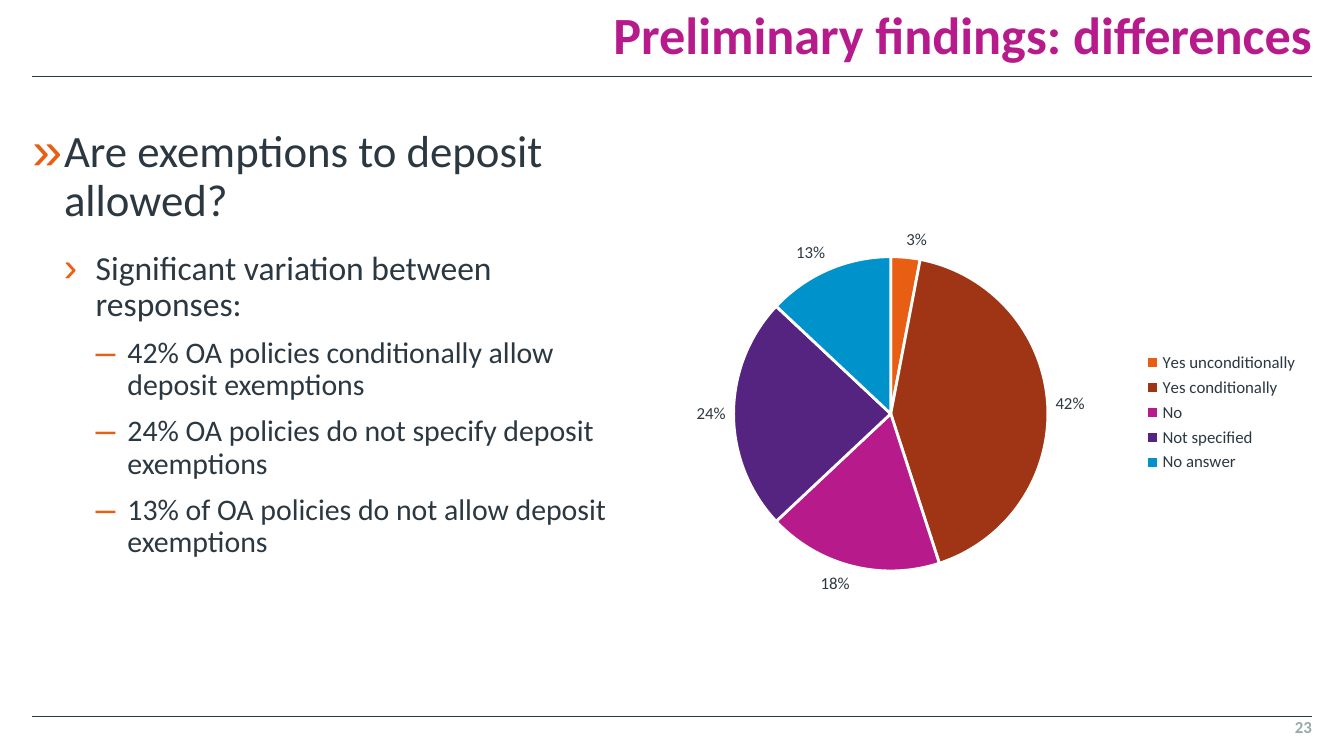
from dataclasses import dataclass

from lxml import etree
from pptx import Presentation
from pptx.chart.data import CategoryChartData
from pptx.dml.color import RGBColor
from pptx.enum.chart import XL_CHART_TYPE, XL_LABEL_POSITION, XL_LEGEND_POSITION
from pptx.enum.shapes import MSO_CONNECTOR
from pptx.enum.text import MSO_ANCHOR, PP_ALIGN
from pptx.oxml.ns import qn
from pptx.util import Inches, Pt

PIE = XL_CHART_TYPE.PIE
OUTER = XL_LABEL_POSITION.OUTSIDE_END
LEGEND = XL_LEGEND_POSITION.RIGHT
STRAIGHT = MSO_CONNECTOR.STRAIGHT
BOTTOM, TOP = MSO_ANCHOR.BOTTOM, MSO_ANCHOR.TOP
RIGHT, LEFT = PP_ALIGN.RIGHT, PP_ALIGN.LEFT

WIDE = 10
HIGH = WIDE * 9 / 16
EDGE = 0.24
FAR = WIDE - EDGE
STEP = Pt(17)  # indent of each bullet level
HEAD, FOOT = 0.57, 5.33
FACE, MARKS = "Calibri", "Arial"
INK, PINK, ORANGE, GREY, WHITE = "2C3841", "B71A8B", "E85E12", "9BA7A8", "FFFFFF"


@dataclass
class Point:
    text: str
    level: int


@dataclass
class Style:
    mark: str
    size: int
    before: float
    after: float


@dataclass
class Slice:
    name: str
    share: int
    color: str


STYLES = [Style("»", 24, 9, 6), Style("›", 18, 7.5, 0), Style("–", 16, 7.5, 0)]
POINTS = [
    Point("Are exemptions to deposit allowed?", 0),
    Point("Significant variation between responses:", 1),
    Point("42% OA policies conditionally allow deposit exemptions", 2),
    Point("24% OA policies do not specify deposit exemptions", 2),
    Point("13% of OA policies do not allow deposit exemptions", 2),
]
SLICES = [
    Slice("Yes unconditionally", 3, ORANGE),
    Slice("Yes conditionally", 42, "9F3515"),
    Slice("No", 18, PINK),
    Slice("Not specified", 24, "552481"),
    Slice("No answer", 13, "0092CB"),
]


def rgb(code: str) -> RGBColor:
    return RGBColor.from_string(code)


def set_font(font, size: float, color: str, bold: bool = False) -> None:
    font.name, font.size, font.bold = FACE, Pt(size), bold
    font.color.rgb = rgb(color)


def add_run(para, text: str, size: float, color: str, bold: bool = False) -> None:
    run = para.add_run()
    run.text = text
    set_font(run.font, size, color, bold)


def set_frame(shape, anchor):
    frame = shape.text_frame
    frame.word_wrap = True
    frame.vertical_anchor = anchor
    frame.margin_left = frame.margin_right = 0
    frame.margin_top = frame.margin_bottom = 0
    return frame


def add_rule(slide, y: float) -> None:
    rule = slide.shapes.add_connector(
        STRAIGHT, Inches(EDGE), Inches(y), Inches(FAR), Inches(y))
    rule.line.color.rgb = rgb(INK)
    rule.line.width = Pt(0.5)
    etree.SubElement(rule._element.spPr, qn("a:effectLst"))


def set_title(slide, text: str) -> None:
    title = slide.shapes.title
    title.left, title.top = Inches(3.03), 0
    title.width, title.height = Inches(FAR - 3.03), Inches(0.49)
    para = set_frame(title, BOTTOM).paragraphs[0]
    para.alignment = RIGHT
    para.line_spacing = 0.9
    add_run(para, text, 28, PINK, True)


def set_bullet(para, level: int, mark: str) -> None:
    props = para._p.get_or_add_pPr()
    props.set("marL", str(STEP * (level + 1)))
    props.set("indent", str(-STEP))
    color = etree.SubElement(props, qn("a:buClr"))
    etree.SubElement(color, qn("a:srgbClr"), val=ORANGE)
    etree.SubElement(props, qn("a:buSzPct"), val="120000")
    etree.SubElement(props, qn("a:buFont"), typeface=MARKS)
    etree.SubElement(props, qn("a:buChar"), char=mark)


def add_points(slide, points: list[Point]) -> None:
    box = slide.shapes.add_textbox(
        Inches(EDGE), Inches(0.96), Inches(4.49), Inches(4.21))
    frame = set_frame(box, TOP)
    for i, point in enumerate(points):
        style = STYLES[point.level]
        para = frame.add_paragraph() if i else frame.paragraphs[0]
        para.level = point.level
        para.alignment = LEFT
        para.line_spacing = 0.9
        para.space_before = Pt(style.before if i else 0)
        para.space_after = Pt(style.after)
        set_bullet(para, point.level, style.mark)
        add_run(para, point.text, style.size, INK)


def add_number(slide, text: str) -> None:
    box = slide.shapes.add_textbox(
        Inches(FAR - 0.79), Inches(FOOT), Inches(0.79), Inches(0.18))
    para = set_frame(box, TOP).paragraphs[0]
    para.alignment = RIGHT
    add_run(para, text, 9, GREY, True)


def add_pie(slide, slices: list[Slice]) -> None:
    data = CategoryChartData()
    data.categories = [part.name for part in slices]
    data.add_series("Series 1", [part.share for part in slices])
    chart = slide.shapes.add_chart(
        PIE, Inches(FAR - 5), Inches(1.57), Inches(5), Inches(3), data).chart
    set_font(chart.font, 10, INK)
    chart.has_title = False
    chart.has_legend = True
    chart.legend.position = LEGEND
    chart.legend.include_in_layout = False
    set_font(chart.legend.font, 9, INK)

    plot = chart.plots[0]
    plot.vary_by_categories = True
    for i, part in enumerate(slices):
        form = plot.series[0].points[i].format
        form.fill.solid()
        form.fill.fore_color.rgb = rgb(part.color)
        form.line.color.rgb = rgb(WHITE)
        form.line.width = Pt(1.5)

    labels = plot.series[0].data_labels
    labels.show_percentage = True
    labels.show_value = False
    labels.number_format = "0%"
    labels.number_format_is_linked = False
    labels.position = OUTER
    set_font(labels.font, 9, INK)


def main() -> None:
    deck = Presentation()
    deck.slide_width, deck.slide_height = Inches(WIDE), Inches(HIGH)
    slide = deck.slides.add_slide(deck.slide_layouts[5])
    for y in (HEAD, FOOT):
        add_rule(slide, y)
    set_title(slide, "Preliminary findings: differences")
    add_points(slide, POINTS)
    add_number(slide, "23")
    add_pie(slide, SLICES)
    deck.save("out.pptx")


if __name__ == "__main__":
    main()
